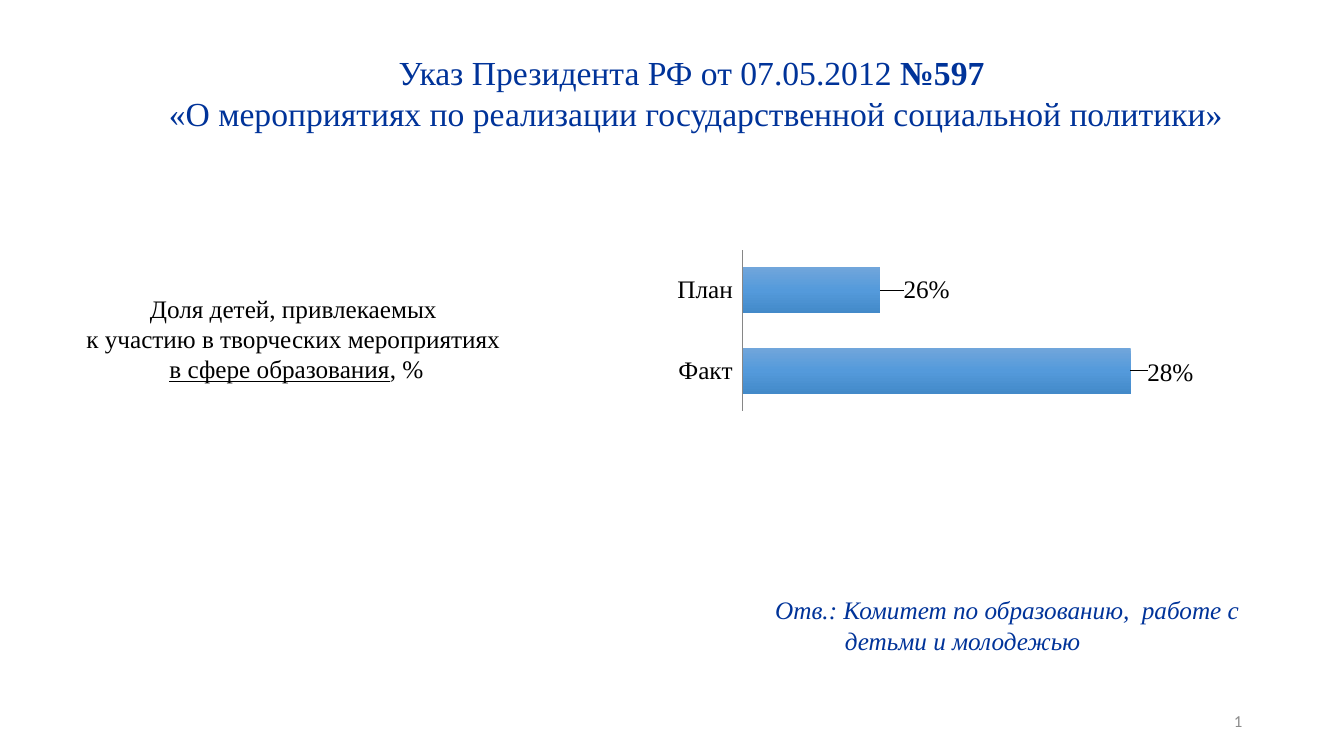
from dataclasses import dataclass

from lxml.etree import SubElement
from pptx import Presentation
from pptx.chart.data import CategoryChartData
from pptx.dml.color import RGBColor
from pptx.enum.chart import XL_CHART_TYPE, XL_LABEL_POSITION, XL_TICK_LABEL_POSITION, XL_TICK_MARK
from pptx.enum.text import MSO_ANCHOR, PP_ALIGN
from pptx.oxml import parse_xml
from pptx.oxml.ns import nsdecls, qn
from pptx.util import Inches, Pt


@dataclass(frozen=True)
class Theme:
    serif: str = "Times New Roman"
    sans: str = "Calibri"
    navy: str = "003399"
    black: str = "000000"
    grey: str = "8C8C8C"
    axis: str = "868686"
    bar_stops: tuple = ("71A6DB", "549ADB", "438AC9")
    title: int = 24
    body: int = 18
    number: int = 12


class SlideBuilder:
    def __init__(self, slide, theme):
        self.slide = slide
        self.theme = theme

    def style(self, font, size, color, face=None):
        font.name = face or self.theme.serif
        font.size = Pt(size)
        font.color.rgb = RGBColor.from_string(color)

    def text(self, box, lines, size, color, align=PP_ALIGN.CENTER, italic=None, face=None):
        frame = self.slide.shapes.add_textbox(*map(Inches, box)).text_frame
        frame.word_wrap = True
        paragraph = frame.paragraphs[0]
        paragraph.alignment = align
        for index, line in enumerate(lines):
            if index:
                paragraph.add_line_break()
            for words, emphasis in line:
                run = paragraph.add_run()
                run.text = words
                self.style(run.font, size, color, face)
                run.font.italic = italic
                run.font.bold = emphasis == "bold" or None
                run.font.underline = emphasis == "underline" or None
        return frame

    def note(self, box, first_line, second_line, indent):
        theme = self.theme
        frame = self.text(box, [[(first_line, None)]], theme.body, theme.navy, PP_ALIGN.LEFT, True)
        continuation = frame.add_paragraph()
        continuation.text = second_line
        continuation._p.get_or_add_pPr().set("marL", str(Inches(indent)))
        self.style(continuation.runs[0].font, theme.body, theme.navy)
        continuation.runs[0].font.italic = True

    def slide_number(self, box, number):
        theme = self.theme
        frame = self.text(box, [[(number, None)]], theme.number, theme.grey, PP_ALIGN.RIGHT, face=theme.sans)
        frame.vertical_anchor = MSO_ANCHOR.MIDDLE
        run = frame.paragraphs[0].runs[0]._r
        field = SubElement(run.getparent(), qn("a:fld"))
        field.set("id", "{B6F15528-21DE-4FAA-801E-634DDDAF4B2B}")
        field.set("type", "slidenum")
        for part in list(run):
            field.append(part)
        run.getparent().remove(run)

    def layout(self, tags):
        values = "".join(f'<c:{tag} val="{value}"/>' for tag, value in tags)
        return parse_xml(f'<c:layout {nsdecls("c")}><c:manualLayout>{values}</c:manualLayout></c:layout>')

    def bar_chart(self, box, shares, plot, limits, label_shifts):
        theme = self.theme
        data = CategoryChartData(number_format="0%")
        data.categories = list(shares)
        data.add_series("Доля детей", shares.values())
        chart = self.slide.shapes.add_chart(XL_CHART_TYPE.BAR_CLUSTERED, *map(Inches, box), data).chart
        chart.has_legend = False
        chart.has_title = False
        self.style(chart.font, theme.body, theme.black)

        categories = chart.category_axis
        categories.major_tick_mark = XL_TICK_MARK.NONE
        categories.has_major_gridlines = False
        categories.format.line.color.rgb = RGBColor.from_string(theme.axis)
        categories.tick_label_position = XL_TICK_LABEL_POSITION.LOW
        values = chart.value_axis
        values.has_major_gridlines = False
        values.minimum_scale, values.maximum_scale = limits
        values.visible = False

        area = chart._chartSpace.chart.plotArea
        for old in area.findall(qn("c:layout")):
            area.remove(old)
        area.insert(0, self.layout([("layoutTarget", "inner"), ("xMode", "edge"), ("yMode", "edge"),
                                    *zip("xywh", plot)]))

        bars = chart.plots[0]
        bars.gap_width = 75
        bars.vary_by_categories = False
        series = bars.series[0]
        stops = "".join(f'<a:gs pos="{index * 50000}"><a:srgbClr val="{color}"/></a:gs>'
                        for index, color in enumerate(theme.bar_stops))
        series.format.fill.solid()
        properties = series.format.fill._xPr
        properties.replace(properties.find(qn("a:solidFill")), parse_xml(
            f'<a:gradFill {nsdecls("a")} rotWithShape="1"><a:gsLst>{stops}</a:gsLst>'
            '<a:lin ang="5400000" scaled="0"/></a:gradFill>'))

        labels = series.data_labels
        labels.show_value = True
        labels.number_format = "0%"
        labels.number_format_is_linked = False
        labels.position = XL_LABEL_POSITION.OUTSIDE_END
        self.style(labels.font, theme.body, theme.black)
        for index, shift in enumerate(label_shifts):
            label = series.points[index].data_label
            label.position = XL_LABEL_POSITION.OUTSIDE_END
            label._dLbl.insert(1, self.layout(zip("xy", shift)))


def main():
    presentation = Presentation()
    presentation.slide_width = Inches(13.33)
    presentation.slide_height = Inches(7.5)
    theme = Theme()
    builder = SlideBuilder(presentation.slides.add_slide(presentation.slide_layouts[6]), theme)

    builder.slide_number((9.42, 6.95, 3, 0.4), "7")
    builder.text((0.69, 0.47, 12.42, 0.91), [
        [("Указ Президента РФ от 07.05.2012 ", None), ("№597 ", "bold")],
        [("«О мероприятиях по реализации государственной социальной политики»", None)],
    ], theme.title, theme.navy)
    builder.text((0.73, 2.86, 4.42, 1.01), [
        [("Доля детей, привлекаемых ", None)],
        [("к участию в творческих мероприятиях ", None)],
        [("в сфере образования", "underline"), (", %", None)],
    ], theme.body, theme.black)
    builder.bar_chart((6.12, 2.21, 6.33, 2.5), {"Факт": 0.28, "План": 0.26},
                      plot=(0.197, 0.108, 0.647, 0.639), limits=(0.249, 0.282),
                      label_shifts=((0.02, 0.01), (0.03, 0)))
    builder.note((7.59, 5.85, 5.32, 1.01), "Отв.: Комитет по образованию,  работе с",
                 "детьми и молодежью", indent=0.69)
    presentation.save("out.pptx")


if __name__ == "__main__":
    main()
